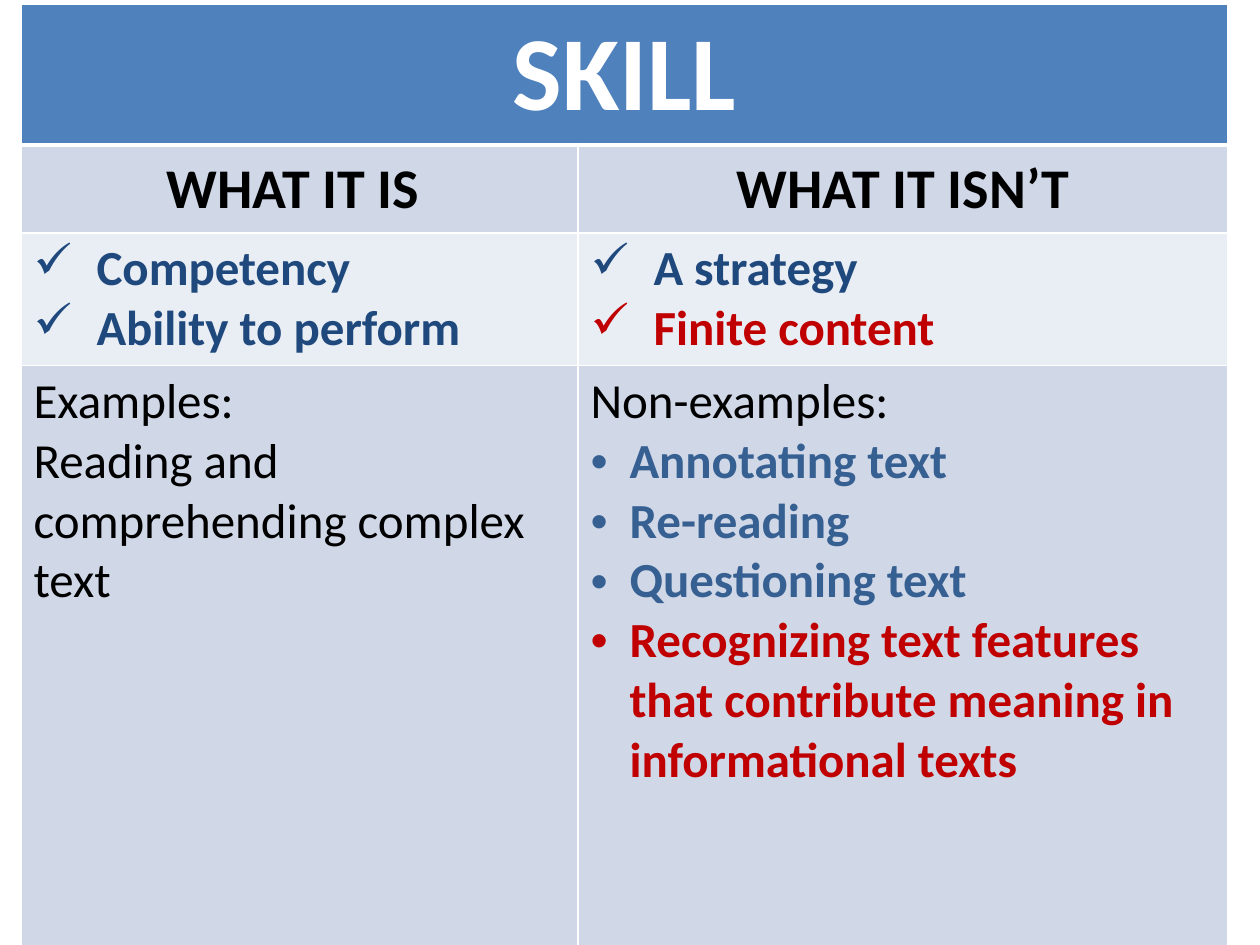
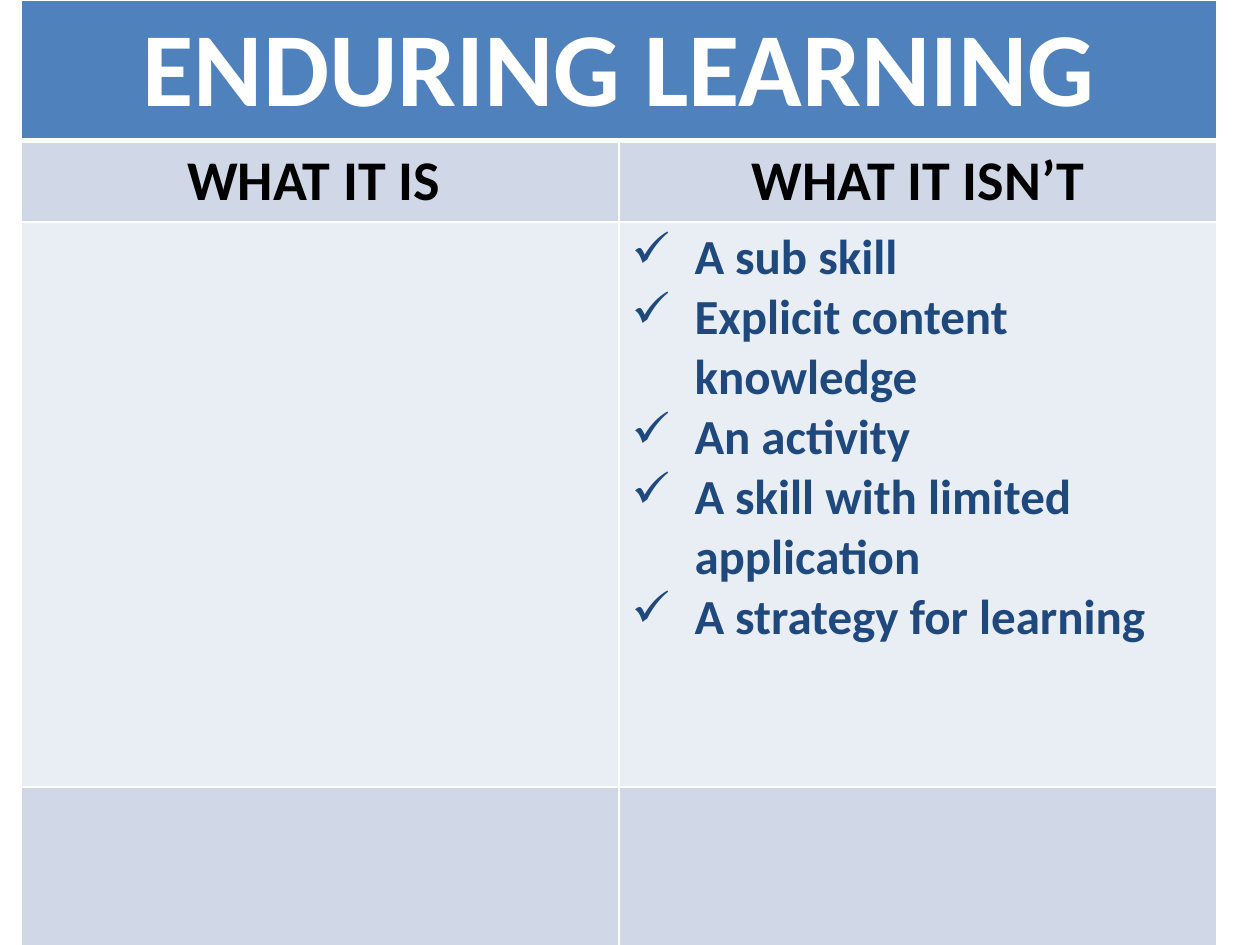
"""Build two comparison tables on what skills and enduring learning are and are not."""
from collections import namedtuple

from lxml import etree
from pptx import Presentation, util as u
from pptx.dml.color import RGBColor
from pptx.enum import text
from pptx.oxml import ns

EMU_PER_PX = 914400 / 126
FONT = "Calibri"
WHITE = RGBColor(0xFF, 0xFF, 0xFF)
BLACK = RGBColor(0x00, 0x00, 0x00)
HEADER_BLUE = RGBColor(0x4F, 0x81, 0xBD)
BAND_DARK = RGBColor(0xD0, 0xD8, 0xE8)
BAND_LIGHT = RGBColor(0xE9, 0xED, 0xF4)
NAVY = RGBColor(0x1F, 0x49, 0x7D)
STEEL = RGBColor(0x37, 0x60, 0x92)
RED = RGBColor(0xC0, 0x00, 0x00)
ROW_FILLS = (HEADER_BLUE, BAND_DARK, BAND_LIGHT, BAND_DARK)
THIN, THICK = 1, 3

Line = namedtuple("Line", "wording size color bold bullet centered")
Bullet = namedtuple("Bullet", "character indent font")
CHECK = Bullet("✓", 63, None)
DOT = Bullet("•", 39, "Arial")


def px(length):
    return u.Emu(round(length * EMU_PER_PX))


def heading(wording, size=32, color=BLACK):
    return Line(wording, size, color, True, None, True)


def plain(wording):
    return Line(wording, 28, BLACK, False, None, False)


def check(wording, color=NAVY):
    return Line(wording, 28, color, True, CHECK, False)


def dot(wording, color=STEEL):
    return Line(wording, 28, color, True, DOT, False)


def set_bullet(paragraph, bullet):
    properties = paragraph._p.get_or_add_pPr()
    indent = px(bullet.indent)
    properties.set("marL", str(indent))
    properties.set("indent", str(-indent))
    if bullet.font:
        etree.SubElement(properties, ns.qn("a:buFont"), typeface=bullet.font)
    etree.SubElement(properties, ns.qn("a:buChar"), char=bullet.character)


def set_borders(cell, top, bottom):
    properties = cell._tc.get_or_add_tcPr()
    widths = {"a:lnL": THIN, "a:lnR": THIN, "a:lnT": top, "a:lnB": bottom}
    for position, (tag, width) in enumerate(widths.items()):
        border = etree.Element(ns.qn(tag), w=str(u.Pt(width)))
        fill = etree.SubElement(border, ns.qn("a:solidFill"))
        etree.SubElement(fill, ns.qn("a:srgbClr"), val=str(WHITE))
        properties.insert(position, border)


def write_lines(cell, lines):
    frame = cell.text_frame
    for index, line in enumerate(lines):
        paragraph = frame.add_paragraph() if index else frame.paragraphs[0]
        if line.centered:
            paragraph.alignment = text.PP_ALIGN.CENTER
        if line.bullet:
            set_bullet(paragraph, line.bullet)
        run = paragraph.add_run()
        run.text = line.wording
        run.font.name = FONT
        run.font.size = u.Pt(line.size)
        run.font.bold = line.bold
        run.font.color.rgb = line.color


def add_comparison(presentation, title, top, columns, rows, body):
    slide = presentation.slides.add_slide(presentation.slide_layouts[6])
    table = slide.shapes.add_table(len(rows), len(columns), px(21), px(top),
                                   px(sum(columns)), px(sum(rows))).table
    table.first_row = table.horz_banding = False
    for column, width in zip(table.columns, columns):
        column.width = px(width)
    for row, height in zip(table.rows, rows):
        row.height = px(height)
    contents = [
        ([heading(title, 60, WHITE)], []),
        ([heading("WHAT IT IS ")], [heading("WHAT IT ISN’T")]),
        *body,
    ]
    for row_index, (row, row_contents) in enumerate(zip(table.rows, contents)):
        for cell, lines in zip(row.cells, row_contents):
            cell.fill.solid()
            cell.fill.fore_color.rgb = ROW_FILLS[row_index]
            set_borders(cell, THICK if row_index == 1 else THIN,
                        THICK if row_index == 0 else THIN)
            write_lines(cell, lines)
            if row_index == 1:
                cell.vertical_anchor = text.MSO_ANCHOR.MIDDLE
    table.cell(0, 0).merge(table.cell(0, 1))


def main():
    presentation = Presentation()
    presentation.slide_width, presentation.slide_height = px(1260), px(945)
    add_comparison(presentation, "SKILL", 4, (557, 650), (141, 88, 132, 580), [
        ([check("Competency"), check("Ability to perform")],
         [check("A strategy"), check("Finite content", RED)]),
        ([plain("Examples:"), plain("Reading and comprehending complex text")],
         [plain("Non-examples:"), dot("Annotating text"), dot("Re-reading"),
          dot("Questioning text"),
          dot("Recognizing text features that contribute meaning in "
              "informational texts", RED)]),
    ])
    not_enduring = ("A sub skill", "Explicit content knowledge", "An activity",
                    "A skill with limited application", "A strategy for learning")
    add_comparison(presentation, "ENDURING LEARNING", 0, (598, 598),
                   (138, 80, 565, 161), [
                       ([], [check(wording) for wording in not_enduring]),
                       ([], []),
                   ])
    presentation.save("out.pptx")


if __name__ == "__main__":
    main()
